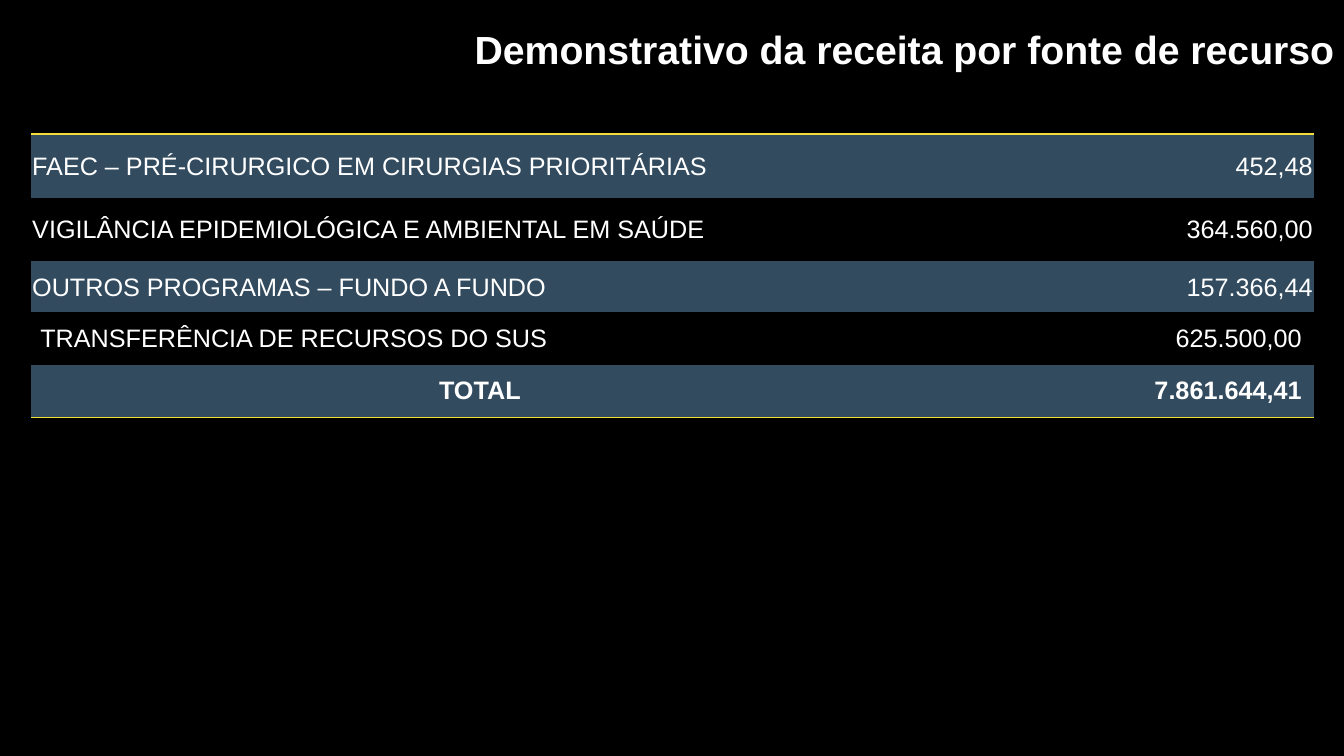
import pptx
import pptx.util
import pptx.dml.color
import pptx.enum.text
import pptx.oxml
import pptx.oxml.ns
from pptx.util import Inches

TITLE = "Demonstrativo da receita por fonte de recurso"
REVENUES = [
    ("FAEC – PRÉ-CIRURGICO EM CIRURGIAS PRIORITÁRIAS", "452,48"),
    ("VIGILÂNCIA EPIDEMIOLÓGICA E AMBIENTAL EM SAÚDE", "364.560,00"),
    ("OUTROS PROGRAMAS – FUNDO A FUNDO", "157.366,44"),
    ("TRANSFERÊNCIA DE RECURSOS DO SUS", "625.500,00"),
    ("TOTAL", "7.861.644,41"),
]
ROW_HEIGHTS = [0.63, 0.63, 0.51, 0.52, 0.52]
COLUMN_WIDTHS = [8.81, 3.91]
INDENTED_FROM = 3
THEME = {
    "background": "000000", "text": "FFFFFF", "band": "324B5F", "rule": "F4DE3A",
    "font": "Arial", "title_size": 28, "table_size": 18, "rule_width": 1,
    "table_style": "{2D5ABB26-0587-4C30-8999-92F81FD0307C}",
}
ALIGN = pptx.enum.text.PP_ALIGN


def color(name):
    return pptx.dml.color.RGBColor.from_string(THEME[name])


def write_text(frame, text, size, bold=False, align=ALIGN.LEFT):
    paragraph = frame.paragraphs[0]
    paragraph.alignment = align
    run = paragraph.add_run()
    run.text = text
    run.font.name = THEME["font"]
    run.font.size = pptx.util.Pt(size)
    run.font.bold = bold
    run.font.color.rgb = color("text")
    return paragraph


def add_rule(cell, side):
    width = pptx.util.Pt(THEME["rule_width"])
    line = pptx.oxml.parse_xml(
        f'<a:{side} {pptx.oxml.ns.nsdecls("a")} w="{width}"><a:solidFill>'
        f'<a:srgbClr val="{THEME["rule"]}"/></a:solidFill></a:{side}>'
    )
    cell._tc.get_or_add_tcPr().insert(0, line)


def fill_cell(cell, text, row, column):
    last = len(REVENUES) - 1
    indented = row >= INDENTED_FROM
    margin = 0 if indented else 0.01
    cell.margin_left = cell.margin_top = Inches(margin)
    cell.margin_right = Inches(0.12 if indented and column else margin)
    cell.margin_bottom = 0
    cell.vertical_anchor = pptx.enum.text.MSO_ANCHOR.MIDDLE
    if row % 2 == 0:
        cell.fill.solid()
        cell.fill.fore_color.rgb = color("band")
    else:
        cell.fill.background()
    if row == 0:
        add_rule(cell, "lnT")
    if row == last:
        add_rule(cell, "lnB")
    align = ALIGN.RIGHT if column else ALIGN.CENTER if row == last else ALIGN.LEFT
    paragraph = write_text(cell.text_frame, text, THEME["table_size"],
                           bold=row == last, align=align)
    if indented and column == 0:
        properties = paragraph._p.get_or_add_pPr()
        properties.set("marL", str(Inches(0.09)))
        properties.set("indent", "0")


def add_revenue_table(slide):
    frame = slide.shapes.add_table(
        len(REVENUES), len(COLUMN_WIDTHS), Inches(0.31), Inches(1.33),
        Inches(sum(COLUMN_WIDTHS)), Inches(sum(ROW_HEIGHTS)))
    table = frame.table
    table.first_row = table.horz_banding = False
    table._tbl.tblPr.find(pptx.oxml.ns.qn("a:tableStyleId")).text = THEME["table_style"]
    for column, width in zip(table.columns, COLUMN_WIDTHS):
        column.width = Inches(width)
    for row, height in zip(table.rows, ROW_HEIGHTS):
        row.height = Inches(height)
    for row, values in enumerate(REVENUES):
        for column, text in enumerate(values):
            fill_cell(table.cell(row, column), text, row, column)


def add_title(slide):
    box = slide.shapes.add_textbox(Inches(2.79), Inches(0.2), Inches(10.54), Inches(0.57))
    box.text_frame.word_wrap = True
    box.text_frame.auto_size = pptx.enum.text.MSO_AUTO_SIZE.SHAPE_TO_FIT_TEXT
    write_text(box.text_frame, TITLE, THEME["title_size"], bold=True, align=ALIGN.RIGHT)


def main():
    presentation = pptx.Presentation()
    presentation.slide_width = Inches(13.33)
    presentation.slide_height = Inches(7.5)
    slide = presentation.slides.add_slide(presentation.slide_layouts[6])
    slide.background.fill.solid()
    slide.background.fill.fore_color.rgb = color("background")
    add_revenue_table(slide)
    add_title(slide)
    presentation.save("out.pptx")


if __name__ == "__main__":
    main()
